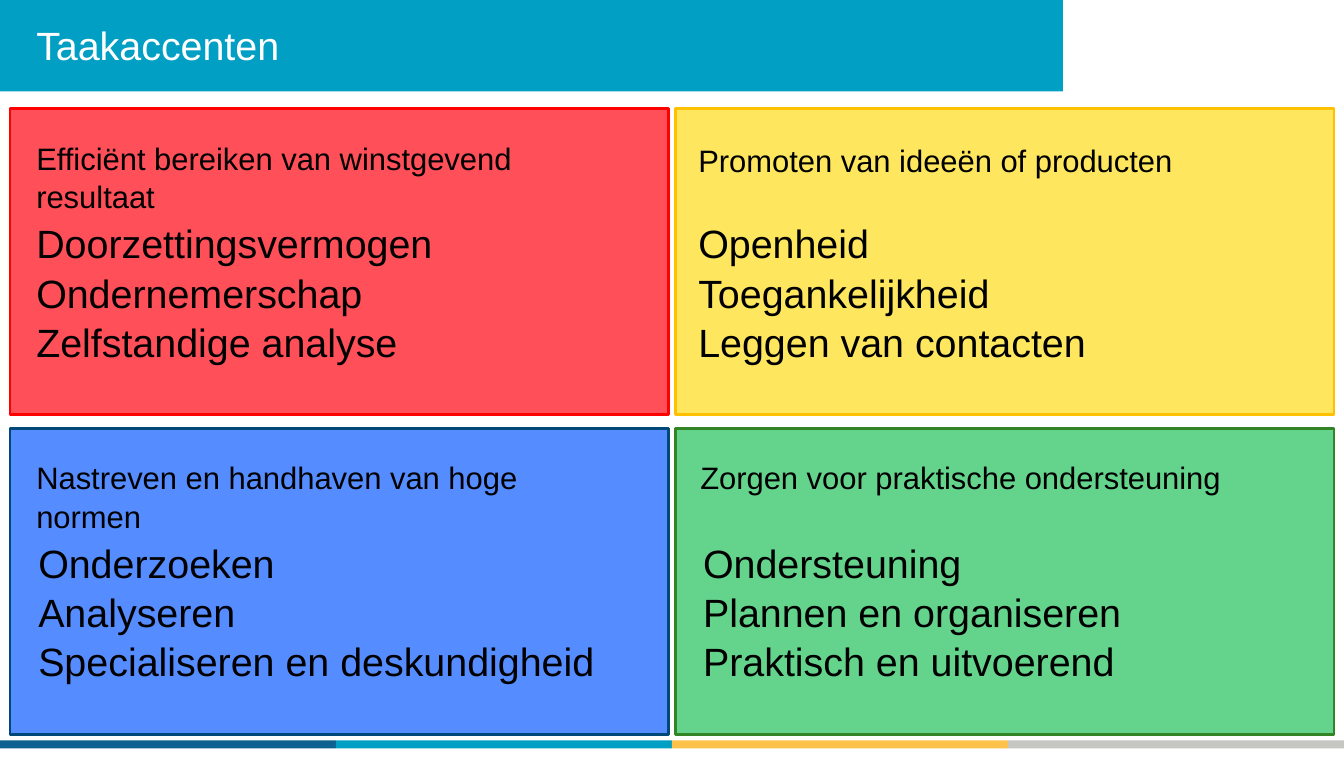
import pptx
import pptx.util
import pptx.dml.color
import pptx.enum.shapes
import pptx.enum.text

Cm, Pt = pptx.util.Cm, pptx.util.Pt
Anchor = pptx.enum.text.MSO_ANCHOR

deck = pptx.Presentation()
deck.slide_width, deck.slide_height = Cm(33.68), Cm(19.05)
slide = deck.slides.add_slide(deck.slide_layouts[6])


def add_rect(left, top, width, height, fill, line=None):
    rect = slide.shapes.add_shape(
        pptx.enum.shapes.MSO_SHAPE.RECTANGLE,
        Cm(left), Cm(top), Cm(width), Cm(height))
    rect.shadow.inherit = False
    rect.fill.solid()
    rect.fill.fore_color.rgb = pptx.dml.color.RGBColor.from_string(fill)
    if line:
        rect.line.color.rgb = pptx.dml.color.RGBColor.from_string(line)
        rect.line.width = Pt(2)
    else:
        rect.line.fill.background()


def add_text(text, left, top, width=15.34, height=1.19, size=28,
             color="000000", anchor=Anchor.TOP, space=1.04):
    """Add a text box with one paragraph per line of text."""
    box = slide.shapes.add_textbox(Cm(left), Cm(top), Cm(width), Cm(height))
    frame = box.text_frame
    frame.word_wrap = True
    frame.vertical_anchor = anchor
    frame.text = text
    for para in frame.paragraphs:
        para.line_spacing = space
        para.font.name = "Arial"
        para.font.size = Pt(size)
        para.font.color.rgb = pptx.dml.color.RGBColor.from_string(color)


# Footer stripe and title bar
part = 33.68 / 4
for i, fill in enumerate(["0D6190", "009FC3", "FEC24A", "C6C6C3"]):
    add_rect(i * part, 18.56, part, 0.2, fill)
add_rect(0, 0, 26.64, 2.29, "009FC3")
add_text("Taakaccenten", 0.66, 0.36, width=25.37, height=1.55,
         color="FFFFFF", anchor=Anchor.MIDDLE, space=1)

# Four quadrants: fill, line, goal, goal left, goal top, traits, traits left
quads = [
    ("FF4F59", "FF0000",
     "Efficiënt bereiken van winstgevend resultaat", 0.66, 3.33,
     ["Doorzettingsvermogen", "Ondernemerschap", "Zelfstandige analyse"],
     0.66),
    ("FEE75E", "FFC000",
     "Promoten van ideeën of producten", 17.25, 3.38,
     ["Openheid", "Toegankelijkheid", "Leggen van contacten"], 17.25),
    ("558CFF", "004877",
     "Nastreven en handhaven van hoge normen", 0.66, 11.33,
     ["Onderzoeken", "Analyseren", "Specialiseren en deskundigheid"], 0.71),
    ("64D48C", "328424",
     "Zorgen voor praktische ondersteuning", 17.3, 11.33,
     ["Ondersteuning", "Plannen en organiseren",
      "Praktisch en uitvoerend"], 17.37),
]
for i, (fill, line, goal, goal_x, goal_y, traits, trait_x) in enumerate(quads):
    row, col = divmod(i, 2)
    add_rect(0.25 + col * 16.67, 2.72 + row * 8.02, 16.51, 7.67, fill, line)
    add_text(goal, goal_x, goal_y, size=22)
    add_text("\n".join(traits), trait_x, 5.33 + row * 8.01, height=3.84)

deck.save("out.pptx")
